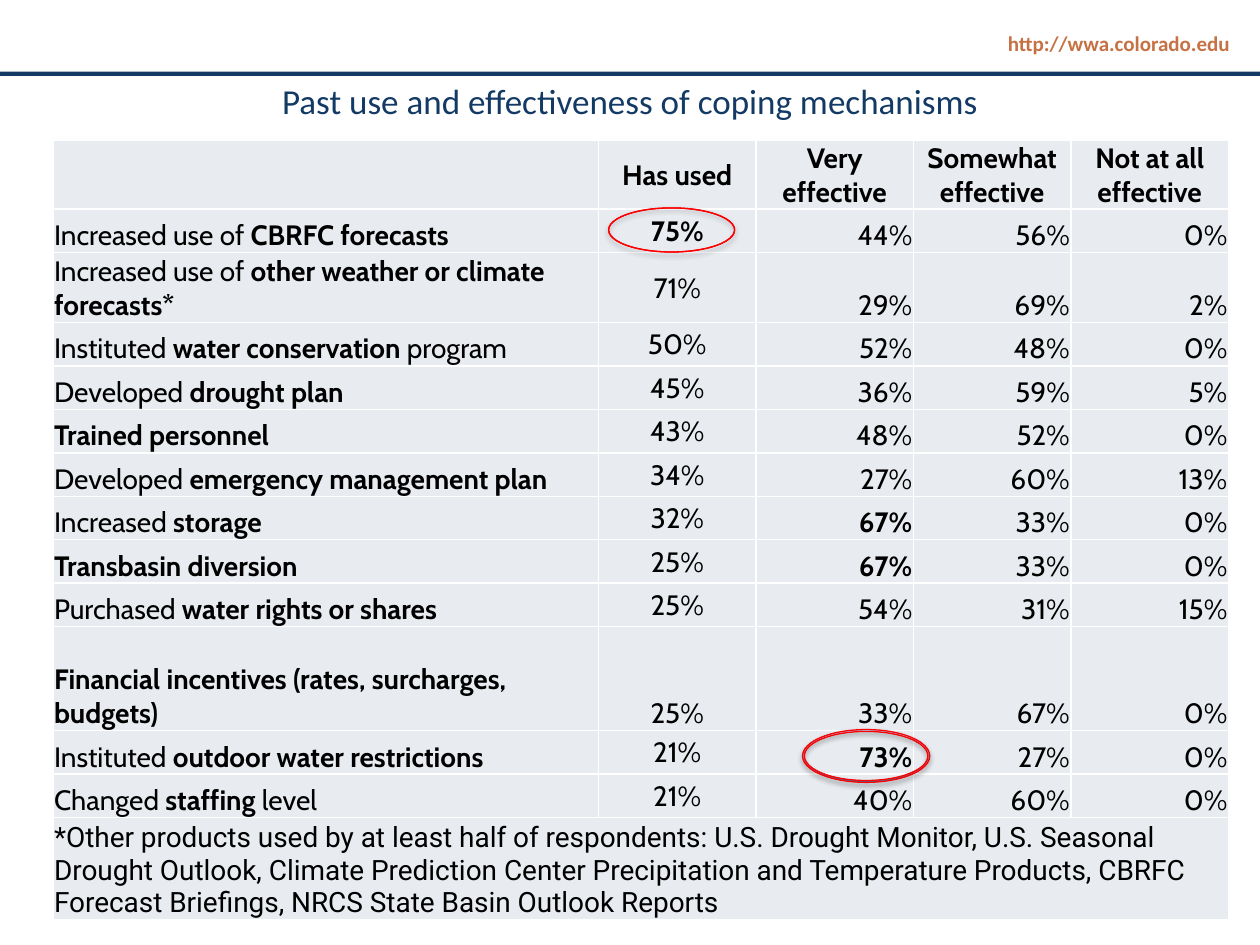
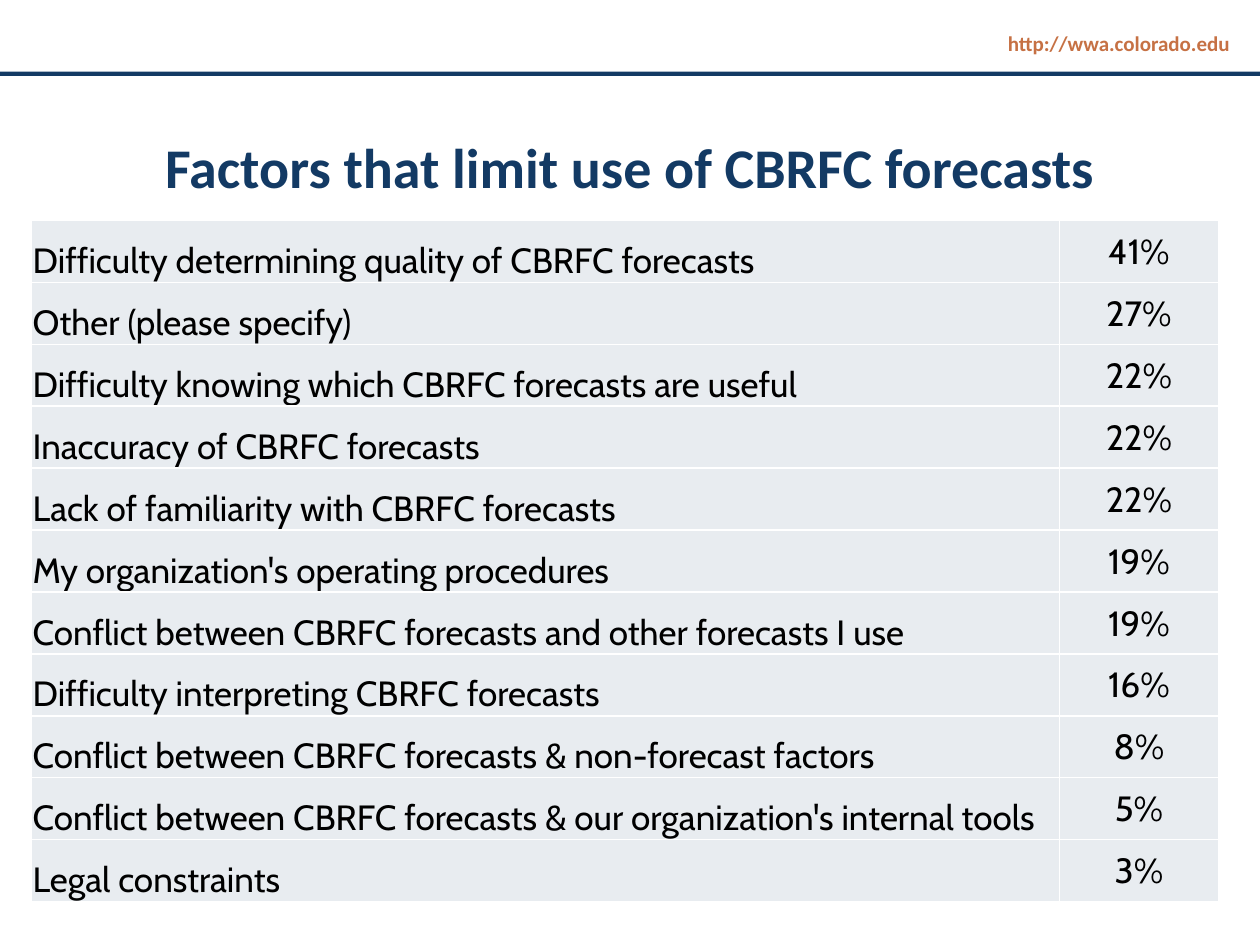
"""Build two survey slides on forecast use and coping mechanisms."""
from lxml import etree
from pptx import Presentation
from pptx.dml.color import RGBColor
from pptx.enum import shapes, text
from pptx.oxml import ns
from pptx.util import Pt

NAVY = RGBColor(0x13, 0x3A, 0x64)
RUST = RGBColor(0xC6, 0x71, 0x44)
PALE = RGBColor(0xE8, 0xEC, 0xF0)
BLACK = RGBColor(0, 0, 0)
WHITE = RGBColor(255, 255, 255)
RED = RGBColor(255, 0, 0)
BLUE = RGBColor(0x1B, 0x83, 0xB0)
SKY = RGBColor(0xA0, 0xCF, 0xF4)

LEFT, MID, RIGHT = text.PP_ALIGN.LEFT, text.PP_ALIGN.CENTER, text.PP_ALIGN.RIGHT
CENTRE, BASE = text.MSO_ANCHOR.MIDDLE, text.MSO_ANCHOR.BOTTOM

HEADS = ["", "|Has used", "|Very effective", "|Somewhat effective",
         "|Not at all effective"]
COPING = [
    ("Increased use of |CBRFC forecasts", "|75%", "44%", "56%", "0%"),
    ("Increased use of| other weather or climate forecasts*",
     "71%", "29%", "69%", "2%"),
    ("Instituted| water conservation |program", "50%", "52%", "48%", "0%"),
    ("Developed| drought plan", "45%", "36%", "59%", "5%"),
    ("|Trained personnel", "43%", "48%", "52%", "0%"),
    ("Developed| emergency management plan", "34%", "27%", "60%", "13%"),
    ("Increased| storage", "32%", "|67%", "33%", "0%"),
    ("|Transbasin diversion", "25%", "|67%", "33%", "0%"),
    ("Purchased| water rights or shares", "25%", "54%", "31%", "15%"),
    ("|Financial incentives (rates, surcharges, budgets)",
     "25%", "33%", "67%", "0%"),
    ("Instituted |outdoor water restrictions", "21%", "|73%", "27%", "0%"),
    ("Changed| staffing |level", "21%", "40%", "60%", "0%"),
]
NOTE = ("*Other products used by at least half of respondents: U.S. Drought "
        "Monitor, U.S. Seasonal Drought Outlook, Climate Prediction Center "
        "Precipitation and Temperature Products, CBRFC Forecast Briefings, "
        "NRCS State Basin Outlook Reports")
LIMITS = [
    ("Difficulty determining quality of CBRFC forecasts", "41%"),
    ("Other (please specify)", "27%"),
    ("Difficulty knowing which CBRFC forecasts are useful", "22%"),
    ("Inaccuracy of CBRFC forecasts", "22%"),
    ("Lack of familiarity with CBRFC forecasts", "22%"),
    ("My organization's operating procedures", "19%"),
    ("Conflict between CBRFC forecasts and other forecasts I use", "19%"),
    ("Difficulty interpreting CBRFC forecasts", "16%"),
    ("Conflict between CBRFC forecasts & non-forecast factors", "8%"),
    ("Conflict between CBRFC forecasts & our organization's internal tools",
     "5%"),
    ("Legal constraints", "3%"),
]


def style(run, size, face, color, bold=False):
    """Set the font of one run."""
    font = run.font
    font.size, font.name, font.bold = Pt(size), face, bold
    font.color.rgb = color


def label(slide, words, box, align, size, color, bold):
    """Add a one-line text box."""
    frame = slide.shapes.add_textbox(*map(Pt, box)).text_frame
    frame.word_wrap = True
    frame.text = words
    para = frame.paragraphs[0]
    para.alignment = align
    style(para.runs[0], size, "Calibri", color, bold)


def page(deck, title, top, size, bold):
    """Add a slide with the web address, the rule and a title."""
    slide = deck.slides.add_slide(deck.slide_layouts[6])
    label(slide, "http://wwa.colorado.edu", (507.6, 13.7, 202.3, 21.6),
          RIGHT, 12, RUST, True)
    rule = slide.shapes.add_shape(shapes.MSO_SHAPE.RECTANGLE,
                                  0, Pt(41), Pt(720), Pt(2.4))
    rule.shadow.inherit = False
    rule.fill.solid()
    rule.fill.fore_color.rgb = NAVY
    rule.line.fill.background()
    label(slide, title, (36, top, 648, 50), MID, size, NAVY, bold)
    return slide


def paint(cell):
    """Give a cell its borders, fill and margins."""
    props = cell._tc.get_or_add_tcPr()
    for side in ("lnL", "lnR", "lnT", "lnB"):
        edge = etree.SubElement(props, ns.qn("a:" + side), w=str(Pt(1)))
        fill = etree.SubElement(edge, ns.qn("a:solidFill"))
        etree.SubElement(fill, ns.qn("a:srgbClr"), val=str(WHITE))
    cell.fill.solid()
    cell.fill.fore_color.rgb = PALE
    cell.margin_left = cell.margin_right = cell.margin_top = Pt(0.72)
    cell.margin_bottom = 0


def write(cell, words, align, anchor, size, face="Cabin"):
    """Fill a cell; every second part between bars is bold."""
    cell.vertical_anchor = anchor
    para = cell.text_frame.paragraphs[0]
    para.alignment = align
    for i, part in enumerate(words.split("|")):
        if part:
            run = para.add_run()
            run.text = part
            style(run, size, face, BLACK, i % 2 == 1)


def grid(slide, left, top, cols, rows):
    """Add a painted empty table with the given widths and heights."""
    table = slide.shapes.add_table(len(rows), len(cols), Pt(left), Pt(top),
                                   Pt(sum(cols)), Pt(sum(rows))).table
    table.first_row = table.horz_banding = False
    for col, width in zip(table.columns, cols):
        col.width = Pt(width)
    for row, height in zip(table.rows, rows):
        row.height = Pt(height)
    for cell in table.iter_cells():
        paint(cell)
    return table


def ring(slide, box, hole):
    """Circle a key value in red with a soft shadow."""
    shape = slide.shapes.add_shape(shapes.MSO_SHAPE.DONUT, *map(Pt, box))
    shape.adjustments[0] = hole
    shape.fill.gradient()
    shape.fill.gradient_angle = 90
    for stop, color in zip(shape.fill.gradient_stops, (BLUE, SKY)):
        stop.color.rgb = color
    shape.line.color.rgb = RED
    shape.line.width = Pt(0.75)
    shape.shadow.inherit = False
    glow = shape._element.spPr.find(ns.qn("a:effectLst"))
    shade = etree.SubElement(glow, ns.qn("a:outerShdw"), blurRad=str(Pt(3.1)),
                             dist=str(Pt(1.8)), dir="5400000", rotWithShape="0")
    tint = etree.SubElement(shade, ns.qn("a:srgbClr"), val=str(BLACK))
    etree.SubElement(tint, ns.qn("a:alpha"), val="35000")


def coping(deck):
    """Build the slide on coping mechanisms."""
    slide = page(deck, "Past use and effectiveness of coping mechanisms",
                 41.8, 20, False)
    rows = [38.9] + [24.85] * len(COPING) + [56]
    rows[2], rows[10] = 40, 59.4
    table = grid(slide, 30.2, 80.3, [311.8] + [90] * 4, rows)
    for c, head in enumerate(HEADS):
        write(table.cell(0, c), head, MID, CENTRE, 16)
    for r, line in enumerate(COPING, 1):
        for c, words in enumerate(line):
            align = (LEFT, MID, RIGHT, RIGHT, RIGHT)[c]
            anchor = CENTRE if c == 1 and r != 10 else BASE
            write(table.cell(r, c), words, align, anchor, 16)
    foot = table.cell(len(rows) - 1, 0)
    foot.merge(table.cell(len(rows) - 1, len(HEADS) - 1))
    write(foot, NOTE, LEFT, BASE, 16, "Roboto")
    ring(slide, (347.8, 118.8, 72, 25.2), 0)
    ring(slide, (458.6, 416.9, 72.7, 30.2), 0.035)


def limits(deck):
    """Build the slide on limiting factors."""
    slide = page(deck, "Factors that limit use of CBRFC forecasts", 72, 32, True)
    table = grid(slide, 18, 126, [587.5, 90.7], [35.4] * len(LIMITS))
    for r, (factor, share) in enumerate(LIMITS):
        write(table.cell(r, 0), factor, LEFT, BASE, 20)
        write(table.cell(r, 1), share, MID, CENTRE, 20)


def main():
    """Build and save the deck."""
    deck = Presentation()
    deck.slide_width, deck.slide_height = Pt(720), Pt(540)
    coping(deck)
    limits(deck)
    deck.save("out.pptx")


if __name__ == "__main__":
    main()
